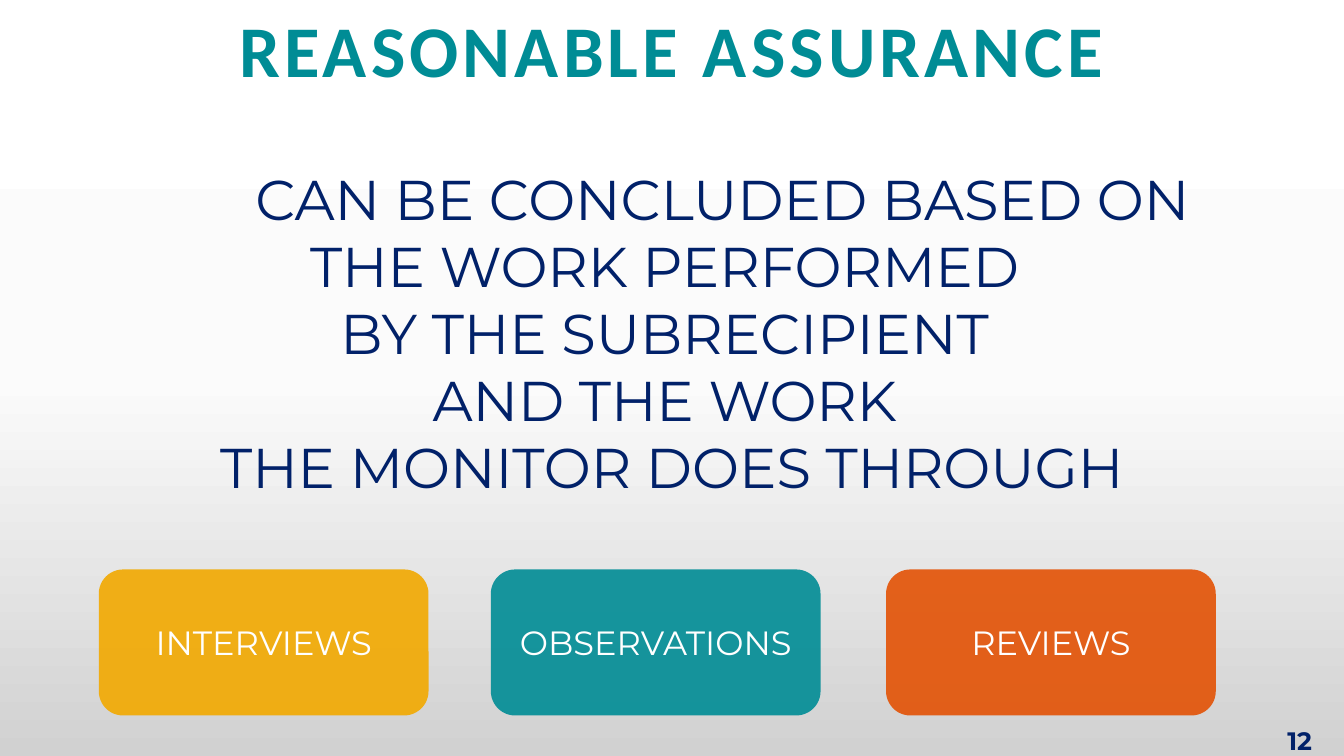
from lxml import etree
from pptx import Presentation
from pptx.dml.color import RGBColor
from pptx.enum import shapes, text
from pptx.oxml import parse_xml
from pptx.oxml.ns import qn
from pptx.util import Cm, Pt

COLORS = {"teal": "008C95", "navy": "012169", "gold": "F2A900",
          "orange": "E35205", "white": "FFFFFF"}
BACKGROUND = [(0, "FFFFFF"), (50, "FBFBFB"), (100, "D1D1D1")]
TITLE = "REASONABLE ASSURANCE"
STATEMENT = ["CAN BE CONCLUDED BASED ON", "THE WORK PERFORMED ",
             "BY THE SUBRECIPIENT ", "AND THE WORK ",
             "THE MONITOR DOES THROUGH"]
METHODS = [("INTERVIEWS", "gold", 2.49), ("OBSERVATIONS", "teal", 12.37),
           ("REVIEWS", "orange", 22.33)]
PAGE = "12"

WIDTH, HEIGHT = 33.87, 19.05
CARD_TOP, CARD_W, CARD_H = 14.35, 8.31, 3.68
OPACITY = 90


def paint_background(s):
    """Fill the slide with a top-to-bottom gradient."""
    stops = "".join(f'<a:gs pos="{pos * 1000}"><a:srgbClr val="{c}"/></a:gs>'
                    for pos, c in BACKGROUND)
    grad = parse_xml(
        '<a:gradFill xmlns:a="http://schemas.openxmlformats.org/drawingml/2006/main"'
        f' rotWithShape="1"><a:gsLst>{stops}</a:gsLst>'
        '<a:lin ang="5400000" scaled="0"/></a:gradFill>')
    s.background.fill.solid()
    solid = s.background._cSld.find(".//" + qn("a:solidFill"))
    solid.getparent().replace(solid, grad)


def write(tf, lines, size, color, font="Montserrat", bold=False):
    tf.word_wrap = True
    for i, line in enumerate(lines):
        p = tf.add_paragraph() if i else tf.paragraphs[0]
        p.alignment = text.PP_ALIGN.CENTER
        r = p.add_run()
        r.text = line
        r.font.size, r.font.name, r.font.bold = Pt(size), font, bold
        r.font.color.rgb = RGBColor.from_string(COLORS[color])


def add_text(s, box, *args, **kwargs):
    tf = s.shapes.add_textbox(*map(Cm, box)).text_frame
    write(tf, *args, **kwargs)
    return tf


def add_card(s, label, color, left):
    sp = s.shapes.add_shape(shapes.MSO_SHAPE.ROUNDED_RECTANGLE, Cm(left),
                            Cm(CARD_TOP), Cm(CARD_W), Cm(CARD_H))
    sp.shadow.inherit = False
    sp.line.fill.background()
    sp.fill.solid()
    sp.fill.fore_color.rgb = RGBColor.from_string(COLORS[color])
    clr = sp._element.spPr.find(qn("a:solidFill"))[0]
    etree.SubElement(clr, qn("a:alpha")).set("val", str(OPACITY * 1000))
    sp.text_frame.vertical_anchor = text.MSO_ANCHOR.MIDDLE
    write(sp.text_frame, [label], 24, "white")


def main():
    prs = Presentation()
    prs.slide_width, prs.slide_height = Cm(WIDTH), Cm(HEIGHT)
    s = prs.slides.add_slide(prs.slide_layouts[6])
    paint_background(s)

    tf = add_text(s, (0, 0, WIDTH, 2.49), [TITLE], 52, "teal", "Calibri", True)
    tf.paragraphs[0].runs[0].font._element.set("spc", "300")

    tf = add_text(s, (0, 4.01, WIDTH, 8.81), STATEMENT, 40, "navy")
    tf.paragraphs[0]._p.get_or_add_pPr().set("marL", str(Cm(2.54)))

    for method in METHODS:
        add_card(s, *method)
    add_text(s, (31.98, 18.16, 1.55, 1.02), [PAGE], 18, "navy", bold=True)
    prs.save("out.pptx")


if __name__ == "__main__":
    main()
